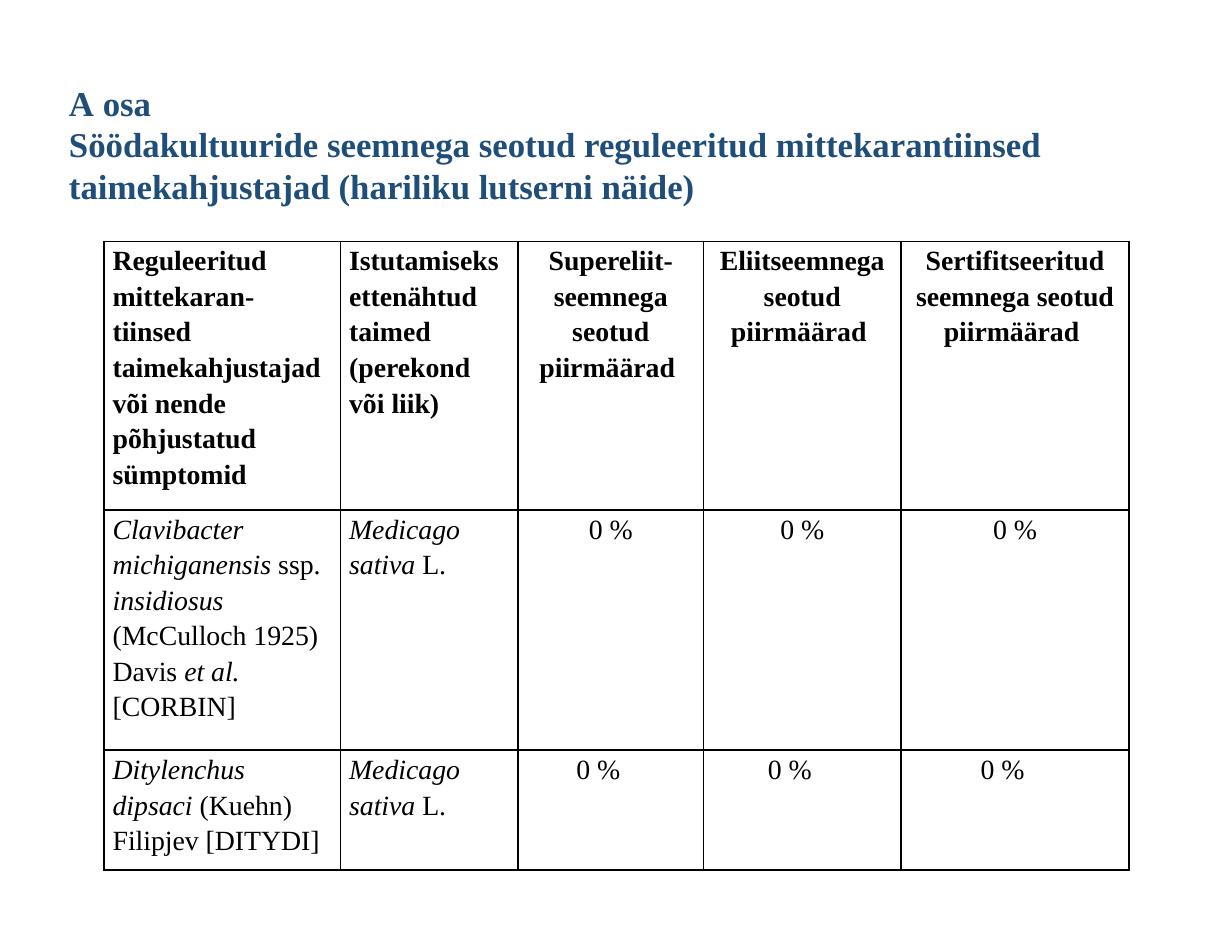
from dataclasses import dataclass

from lxml import etree
from pptx import Presentation
from pptx.dml.color import RGBColor
from pptx.enum.text import MSO_ANCHOR, PP_ALIGN
from pptx.oxml.ns import qn
from pptx.util import Cm, Inches, Pt

LEFT, MID = PP_ALIGN.LEFT, PP_ALIGN.CENTER
TOP = MSO_ANCHOR.TOP


@dataclass(frozen=True)
class Theme:
    font: str = "Times New Roman"
    title: str = "1F4E79"
    ink: str = "000000"
    paper: str = "FFFFFF"
    head: int = 20
    body: int = 16
    rule: int = 1
    lead: float = 1.15
    gap: int = 6


THEME = Theme()
WIDE, HIGH = Cm(25), Cm(19)

# Table grid, in inches
LEFT_X, TOP_Y, TALL = 0.83, 1.93, 5.03
COLS = (1.89, 1.42, 1.48, 1.58, 1.82)
ROWS = (1.6, 1.92, 0.96)
PAD, SHIFT = 0.07, 0.2

TITLE = (
    "A\u00a0osa",
    "Söödakultuuride seemnega seotud reguleeritud mittekarantiinsed "
    "taimekahjustajad (hariliku lutserni näide)",
)
HEADS = (
    "Reguleeritud mittekaran-tiinsed taimekahjustajad või nende "
    "põhjustatud sümptomid",
    "Istutamiseks ettenähtud taimed (perekond või liik)",
    "Supereliit-seemnega seotud piirmäärad ",
    "Eliitseemnega seotud piirmäärad ",
    "Sertifitseeritud seemnega seotud piirmäärad ",
)
# Asterisks enclose italic words
PLANT = "*Medicago sativa* L."
PESTS = (
    "*Clavibacter michiganensis* ssp. *insidiosus* (McCulloch 1925) "
    "Davis *et al.* [CORBIN]",
    "*Ditylenchus dipsaci* (Kuehn) Filipjev [DITYDI]",
)
LIMITS = ("0\u00a0%",) * 3


def apply(item, form):
    for name, value in form.items():
        setattr(item, name, value)


def write(para, text, size, color, bold):
    for i, part in enumerate(text.split("*")):
        if part:
            run = para.add_run()
            run.text = part
            apply(run.font, {"name": THEME.font, "size": Pt(size),
                             "bold": bold, "italic": i % 2 == 1})
            run.font.color.rgb = RGBColor.from_string(color)


def add_title(slide):
    box = slide.shapes.add_textbox(int(0.056 * WIDE), int(0.079 * HIGH),
                                   int(0.88 * WIDE), int(0.158 * HIGH))
    frame = box.text_frame
    apply(frame, {"word_wrap": True, "vertical_anchor": TOP, "margin_left": 0,
                  "margin_right": 0, "margin_top": Inches(0.06),
                  "margin_bottom": 0})
    para = frame.paragraphs[0]
    for i, line in enumerate(TITLE):
        if i:
            para.add_line_break()
        write(para, line, THEME.head, THEME.title, True)


def add_rules(cell):
    props = cell._tc.get_or_add_tcPr()
    for i, side in enumerate(("lnL", "lnR", "lnT", "lnB")):
        line = etree.Element(qn(f"a:{side}"), w=str(Pt(THEME.rule)))
        fill = etree.SubElement(line, qn("a:solidFill"))
        etree.SubElement(fill, qn("a:srgbClr"), val=THEME.ink)
        props.insert(i, line)


def fill_cell(cell, text, bold, align, right, gap):
    apply(cell, {"margin_left": Inches(PAD), "margin_right": Inches(right),
                 "margin_top": 0, "margin_bottom": 0, "vertical_anchor": TOP})
    cell.fill.solid()
    cell.fill.fore_color.rgb = RGBColor.from_string(THEME.paper)
    add_rules(cell)
    para = cell.text_frame.paragraphs[0]
    apply(para, {"alignment": align, "line_spacing": THEME.lead,
                 "space_before": Pt(gap), "space_after": Pt(gap)})
    write(para, text, THEME.body, THEME.ink, bold)


def add_grid(slide):
    data = [HEADS] + [(pest, PLANT) + LIMITS for pest in PESTS]
    frame = slide.shapes.add_table(
        len(ROWS), len(COLS), Inches(LEFT_X), Inches(TOP_Y),
        Inches(sum(COLS)), Inches(TALL))
    table = frame.table
    apply(table, {"first_row": True, "horz_banding": False})
    for col, width in zip(table.columns, COLS):
        col.width = Inches(width)
    for row, height in zip(table.rows, ROWS):
        row.height = Inches(height)
    # The frame is taller than its rows, so that the head row can grow
    frame.height = Inches(TALL)
    for r, texts in enumerate(data):
        last = r == len(ROWS) - 1
        for c, text in enumerate(texts):
            limit = c > 1
            # Limits in the last row sit left of centre
            right = PAD + SHIFT * (limit and last)
            fill_cell(table.cell(r, c), text, r == 0,
                      MID if limit else LEFT, right, 0 if last else THEME.gap)


def main():
    deck = Presentation()
    deck.slide_width = WIDE
    deck.slide_height = HIGH
    slide = deck.slides.add_slide(deck.slide_layouts[6])
    add_title(slide)
    add_grid(slide)
    deck.save("out.pptx")


if __name__ == "__main__":
    main()
